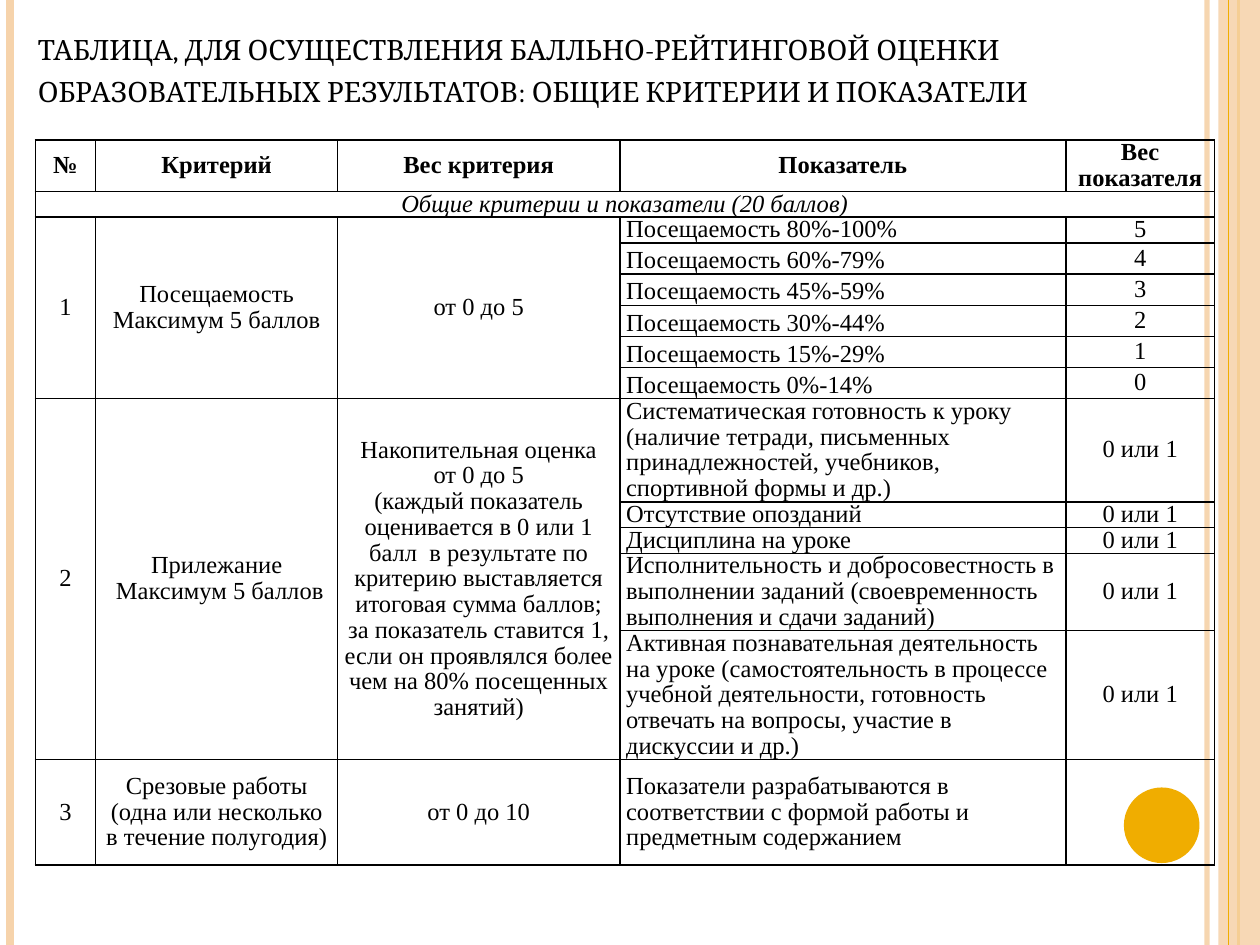
import pptx
import pptx.util
import pptx.oxml
import pptx.oxml.ns
import pptx.dml.color
import pptx.enum.shapes
import pptx.enum.text
from pptx.util import Inches

COLORS = {"text": "000000", "peach": "F6D3AB", "gold": "F0AD00"}
ALIGN = pptx.enum.text.PP_ALIGN
ANCHOR = pptx.enum.text.MSO_ANCHOR
SHAPE = pptx.enum.shapes.MSO_SHAPE

TITLE = ("таблица, для осуществления балльно-рейтинговой оценки "
         "образовательных результатов: общие критерии и показатели")
HEADERS = ["№", "Критерий", "Вес критерия", "Показатель", "Вес показателя"]
SECTION = "Общие критерии и показатели (20 баллов)"
ATTENDANCE = ["80%-100%", "60%-79%", "45%-59%", "30%-44%", "15%-29%", "0%-14%"]
DILIGENCE = [
    "Систематическая готовность к уроку (наличие тетради, письменных "
    "принадлежностей, учебников, спортивной формы и др.)",
    "Отсутствие опозданий",
    "Дисциплина на уроке",
    "Исполнительность и добросовестность в выполнении заданий "
    "(своевременность выполнения и сдачи заданий)",
    "Активная познавательная деятельность на уроке (самостоятельность в процессе "
    "учебной деятельности, готовность отвечать на вопросы, участие в дискуссии и др.)",
]
CRITERIA = [
    (["Посещаемость", "Максимум 5 баллов"],
     ["от 0 до 5"],
     [(f"Посещаемость {share}", str(5 - i)) for i, share in enumerate(ATTENDANCE)]),
    (["Прилежание", " Максимум 5 баллов"],
     ["Накопительная оценка", "от 0 до 5",
      "(каждый показатель оценивается в 0 или 1 балл  в результате по критерию "
      "выставляется итоговая сумма баллов; за показатель ставится 1, если он "
      "проявлялся более чем на 80% посещенных занятий)"],
     [(text, "0 или 1") for text in DILIGENCE]),
    (["Срезовые работы", "(одна или несколько в течение полугодия)"],
     ["от 0 до 10"],
     [("Показатели разрабатываются в соответствии с формой работы "
       "и предметным содержанием", "")]),
]
COLUMN_WIDTHS = [0.48, 1.92, 2.24, 3.54, 1.18]
ROW_HEIGHTS = [0.36, 0.12, 0.12] + [0.15] * 5 + [0.6, 0.12, 0.12, 0.6, 0.84, 0.84]
LOOSE_ROWS = range(3, 8)


class SlideBuilder:
    def __init__(self, slide):
        self.slide = slide
        self.title_font = "Cambria"
        self.table_font = "Times New Roman"
        self.title_size = 20
        self.table_size = 14

    def color(self, name):
        return pptx.dml.color.RGBColor.from_string(COLORS[name])

    def element(self, parent, tag, **attributes):
        child = pptx.oxml.parse_xml(f"<a:{tag} {pptx.oxml.ns.nsdecls('a')}/>")
        for key, value in attributes.items():
            child.set(key, str(value))
        parent.append(child)
        return child

    def set_alpha(self, fill, percent):
        self.element(fill.fore_color._xFill[0], "alpha", val=percent * 1000)

    def run(self, para, text, font, size, bold=False, italic=False):
        span = para.add_run()
        span.text = text
        span.font.name = font
        span.font.size = pptx.util.Pt(size)
        span.font.bold = bold
        span.font.italic = italic
        span.font.color.rgb = self.color("text")
        return span

    def title(self, text, left, top, width, height):
        box = self.slide.shapes.title
        box.left, box.top = Inches(left), Inches(top)
        box.width, box.height = Inches(width), Inches(height)
        frame = box.text_frame
        frame.auto_size = pptx.enum.text.MSO_AUTO_SIZE.NONE
        frame.vertical_anchor = ANCHOR.BOTTOM
        para = frame.paragraphs[0]
        para.alignment = ALIGN.LEFT
        span = self.run(para, text, self.title_font, self.title_size)
        span.font._element.set("cap", "small")

    def vertical_line(self, x, color, width, alpha=None):
        line = self.slide.shapes.add_connector(
            pptx.enum.shapes.MSO_CONNECTOR.STRAIGHT,
            Inches(x), Inches(0), Inches(x), Inches(7.5))
        line.line.color.rgb = self.color(color)
        line.line.width = pptx.util.Pt(width)
        if alpha:
            self.set_alpha(line.line.fill, alpha)
        self.element(line._element.spPr, "effectLst")

    def shape(self, kind, left, top, width, height, color, alpha=None):
        shape = self.slide.shapes.add_shape(
            kind, Inches(left), Inches(top), Inches(width), Inches(height))
        shape.shadow.inherit = False
        shape.fill.solid()
        shape.fill.fore_color.rgb = self.color(color)
        if alpha:
            self.set_alpha(shape.fill, alpha)
        shape.line.fill.background()

    def table(self, left, top, widths, heights):
        frame = self.slide.shapes.add_table(
            len(heights), len(widths), Inches(left), Inches(top),
            Inches(sum(widths)), Inches(sum(heights)))
        table = frame.table
        table.first_row = table.horz_banding = False
        for column, width in zip(table.columns, widths):
            column.width = Inches(width)
        for row, height in zip(table.rows, heights):
            row.height = Inches(height)
        for cell in table.iter_cells():
            cell.margin_left = cell.margin_right = Inches(0.05)
            cell.margin_top = cell.margin_bottom = 0
            cell.vertical_anchor = ANCHOR.MIDDLE
            properties = cell._tc.get_or_add_tcPr()
            for side in ("lnL", "lnR", "lnT", "lnB"):
                border = self.element(properties, side, w=pptx.util.Pt(1))
                fill = self.element(border, "solidFill")
                self.element(fill, "srgbClr", val=COLORS["text"])
            cell.fill.background()
        return table

    def cell(self, cell, lines, align=ALIGN.CENTER, spacing=0.95, bold=False, italic=False):
        frame = cell.text_frame
        for index, text in enumerate(lines):
            para = frame.add_paragraph() if index else frame.paragraphs[0]
            para.alignment = align
            para.line_spacing = spacing
            if text:
                self.run(para, text, self.table_font, self.table_size, bold, italic)


def fill_table(builder, table):
    for column, text in enumerate(HEADERS):
        builder.cell(table.cell(0, column), [text], bold=True)
    table.cell(1, 0).merge(table.cell(1, len(HEADERS) - 1))
    builder.cell(table.cell(1, 0), [SECTION], italic=True)

    row = 2
    for number, (criterion, weight, indicators) in enumerate(CRITERIA, 1):
        last = row + len(indicators) - 1
        for column, lines in enumerate(([str(number)], criterion, weight)):
            if last > row:
                table.cell(row, column).merge(table.cell(last, column))
            builder.cell(table.cell(row, column), lines)
        for indicator, points in indicators:
            indicator_cell = table.cell(row, 3)
            loose = row in LOOSE_ROWS
            if loose:
                indicator_cell.vertical_anchor = ANCHOR.TOP
            builder.cell(indicator_cell, [indicator], ALIGN.LEFT, 1.15 if loose else 0.95)
            builder.cell(table.cell(row, 4), [points])
            row += 1


def main():
    deck = pptx.Presentation()
    deck.slide_width, deck.slide_height = Inches(10), Inches(7.5)
    page = deck.slides.add_slide(deck.slide_layouts[5])
    builder = SlideBuilder(page)
    builder.vertical_line(9.58, "peach", 3, 93)
    builder.vertical_line(0.08, "peach", 4.5)
    builder.vertical_line(9.83, "gold", 1.5)
    builder.shape(SHAPE.RECTANGLE, 9.67, 0, 0.33, 7.5, "peach", 87)
    builder.vertical_line(9.75, "gold", 0.75)
    builder.shape(SHAPE.OVAL, 8.92, 6.25, 0.6, 0.6, "gold")
    builder.title(TITLE, 0.2, 0.21, 9.07, 0.71)
    fill_table(builder, builder.table(0.28, 1.11, COLUMN_WIDTHS, ROW_HEIGHTS))
    deck.save("out.pptx")


if __name__ == "__main__":
    main()
